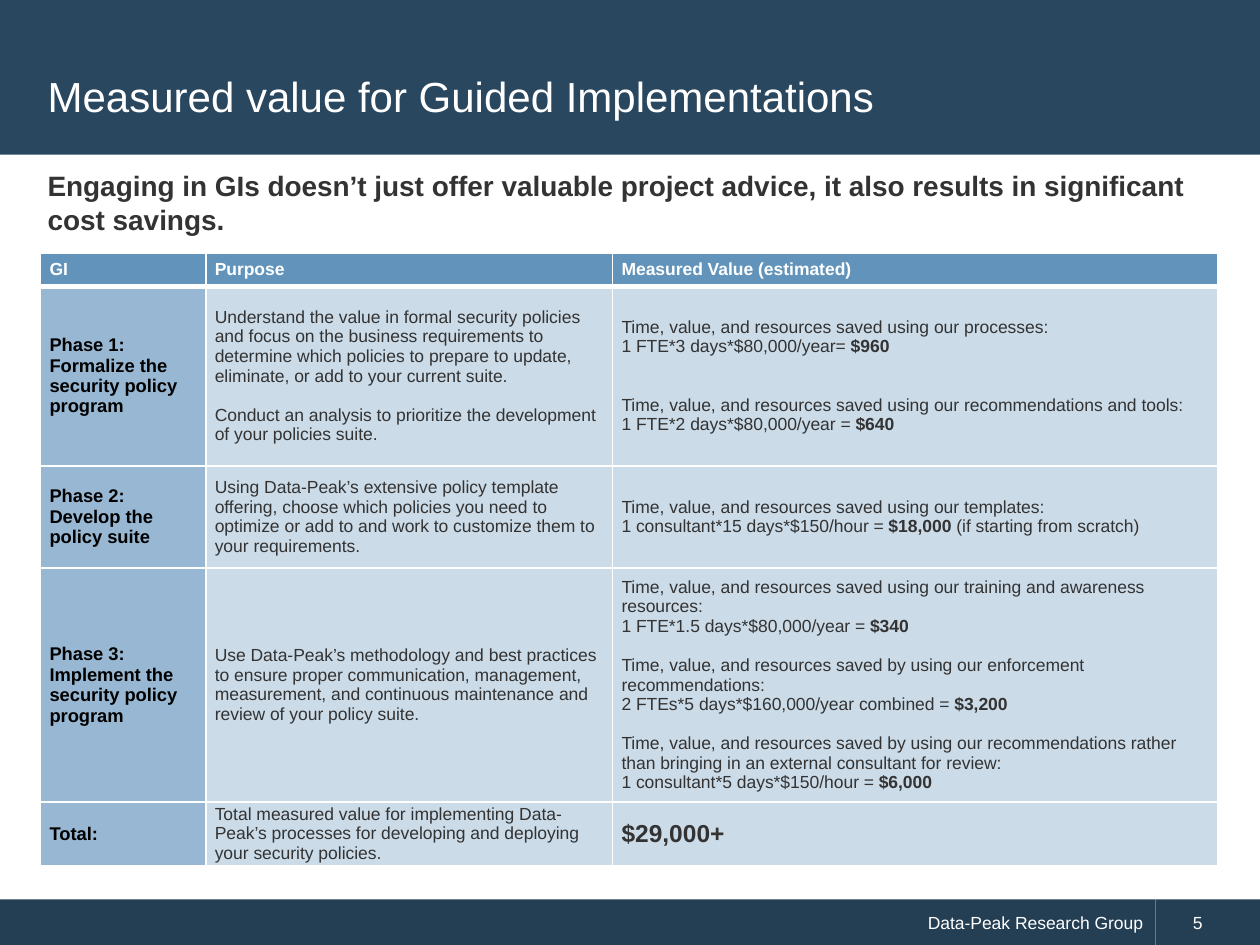
from lxml import etree
from pptx import Presentation
from pptx.dml.color import RGBColor
from pptx.enum.shapes import MSO_SHAPE
from pptx.enum.text import MSO_ANCHOR, PP_ALIGN
from pptx.oxml.ns import qn
from pptx.util import Cm, Pt

RECT = MSO_SHAPE.RECTANGLE
MIDDLE, TOP = MSO_ANCHOR.MIDDLE, MSO_ANCHOR.TOP
LEFT, RIGHT = PP_ALIGN.LEFT, PP_ALIGN.RIGHT

FONT = "Arial"
COLORS = {
    "white": "FFFFFF", "black": "000000", "text": "333333",
    "title_bar": "29475F", "footer": "243F54",
    "header": "6294BB", "phase": "97B7D2", "body": "CBDBE8",
}
LINE = 11.2  # height in points of one line of table text

COL_WIDTHS = [3.33, 8.2, 12.19]
ROW_HEIGHTS = [0.66, 3.62, 2.06, 4.72, 1.18]
HEADERS = ["GI", "Purpose", "Measured Value (estimated)"]

# A cell is a list of (paragraph, lines of space after); ** marks bold text.
ROWS = [
    ("Phase 1: Formalize the security policy program",
     [("Understand the value in formal security policies and focus on the "
       "business requirements to determine which policies to prepare to update, "
       "eliminate, or add to your current suite.", 1),
      ("Conduct an analysis to prioritize the development of your policies suite.", 0)],
     [("Time, value, and resources saved using our processes:", 0),
      ("1 FTE*3 days*$80,000/year= **$960**", 2),
      ("Time, value, and resources saved using our recommendations and tools:", 0),
      ("1 FTE*2 days*$80,000/year = **$640**", 1)]),
    ("Phase 2: Develop the policy suite",
     [("Using Data-Peak’s extensive policy template offering, choose which policies "
       "you need to optimize or add to and work to customize them to your "
       "requirements.", 0)],
     [("Time, value, and resources saved using our templates:", 0),
      ("1 consultant*15 days*$150/hour = **$18,000 **(if starting from scratch)", 0)]),
    ("Phase 3: Implement the security policy program",
     [("Use Data-Peak’s methodology and best practices to ensure proper "
       "communication, management, measurement, and continuous maintenance and "
       "review of your policy suite.", 0)],
     [("Time, value, and resources saved using our training and awareness "
       "resources:", 0),
      ("1 FTE*1.5 days*$80,000/year = **$340**", 1),
      ("Time, value, and resources saved by using our enforcement "
       "recommendations:", 0),
      ("2 FTEs*5 days*$160,000/year combined = **$3,200**", 1),
      ("Time, value, and resources saved by using our recommendations rather than "
       "bringing in an external consultant for review:", 0),
      ("1 consultant*5 days*$150/hour = **$6,000**", 1)]),
    ("Total:",
     [("Total measured value for implementing Data-Peak’s processes for developing "
       "and deploying your security policies.", 0)],
     [("**$29,000+**", 0)]),
]


def rgb(name):
    return RGBColor.from_string(COLORS[name])


def add_run(p, text, size, color, bold=False):
    r = p.add_run()
    r.text = text
    r.font.name = FONT
    r.font.size = Pt(size)
    r.font.bold = bold
    r.font.color.rgb = rgb(color)


def add_bar(slide, x, y, w, h, color):
    sp = slide.shapes.add_shape(RECT, Cm(x), Cm(y), Cm(w), Cm(h))
    sp.shadow.inherit = False
    sp.fill.solid()
    sp.fill.fore_color.rgb = rgb(color)
    sp.line.fill.background()
    return sp


def add_footer_part(slide, x, w, text, align, indent=0.25):
    sp = add_bar(slide, x, 18.13, w, 0.92, "footer")
    tf = sp.text_frame
    tf.margin_left = Cm(indent)
    tf.vertical_anchor = MIDDLE
    p = tf.paragraphs[0]
    p.alignment = align
    add_run(p, text, 10, "white")


def add_heading(slide, y, h, text, size, color, anchor, bold=False):
    tf = slide.shapes.add_textbox(Cm(0.71), Cm(y), Cm(23.95), Cm(h)).text_frame
    tf.word_wrap = True
    tf.vertical_anchor = anchor
    add_run(tf.paragraphs[0], text, size, color, bold)


def set_borders(cell, bottom):
    """Draw white borders of 1 pt, with the given width at the bottom."""
    tc_pr = cell._tc.get_or_add_tcPr()
    widths = {"lnL": 1, "lnR": 1, "lnT": 1, "lnB": bottom}
    for i, (tag, width) in enumerate(widths.items()):
        ln = etree.Element(qn(f"a:{tag}"), w=str(Pt(width)))
        fill = etree.SubElement(ln, qn("a:solidFill"))
        etree.SubElement(fill, qn("a:srgbClr"), val=COLORS["white"])
        tc_pr.insert(i, ln)


def fill_cell(cell, paragraphs, fill, color, size=10, bold=False, bottom=1):
    cell.margin_left = cell.margin_right = Cm(0.18)
    cell.margin_top = cell.margin_bottom = 0
    cell.vertical_anchor = MIDDLE
    cell.fill.solid()
    cell.fill.fore_color.rgb = rgb(fill)
    set_borders(cell, bottom)
    tf = cell.text_frame
    for i, (text, lines_after) in enumerate(paragraphs):
        p = tf.add_paragraph() if i else tf.paragraphs[0]
        p.space_after = Pt(LINE * lines_after)
        for j, part in enumerate(text.split("**")):
            if part:
                add_run(p, part, size, color, bold or j % 2 == 1)


def add_value_table(slide):
    frame = slide.shapes.add_table(
        len(ROW_HEIGHTS), len(COL_WIDTHS), Cm(0.82), Cm(5.11),
        Cm(sum(COL_WIDTHS)), Cm(sum(ROW_HEIGHTS)))
    table = frame.table
    table.horz_banding = False
    for col, width in zip(table.columns, COL_WIDTHS):
        col.width = Cm(width)
    for row, height in zip(table.rows, ROW_HEIGHTS):
        row.height = Cm(height)

    for c, text in enumerate(HEADERS):
        fill_cell(table.cell(0, c), [(text, 0)], "header", "white", bold=True, bottom=3)
    for r, (phase, purpose, value) in enumerate(ROWS, start=1):
        value_size = 14 if r == len(ROWS) else 10
        fill_cell(table.cell(r, 0), [(phase, 0)], "phase", "black", 10.5, True)
        fill_cell(table.cell(r, 1), purpose, "body", "text")
        fill_cell(table.cell(r, 2), value, "body", "text", value_size)


def main():
    prs = Presentation()
    prs.slide_width, prs.slide_height = Cm(25.4), Cm(19.05)
    slide = prs.slides.add_slide(prs.slide_layouts[6])

    add_footer_part(slide, 0, 23.29, "Data-Peak Research Group", RIGHT)
    add_footer_part(slide, 23.29, 2.11, "5", LEFT, indent=0.76)
    add_bar(slide, 0, 0, 25.4, 3.12, "title_bar")
    add_heading(slide, 0.71, 2.44, "Measured value for Guided Implementations",
                24, "white", MIDDLE)
    add_value_table(slide)
    add_heading(slide, 3.28, 1.83,
                "Engaging in GIs doesn’t just offer valuable project advice, "
                "it also results in significant cost savings.",
                16, "text", TOP, bold=True)
    prs.save("out.pptx")


if __name__ == "__main__":
    main()
